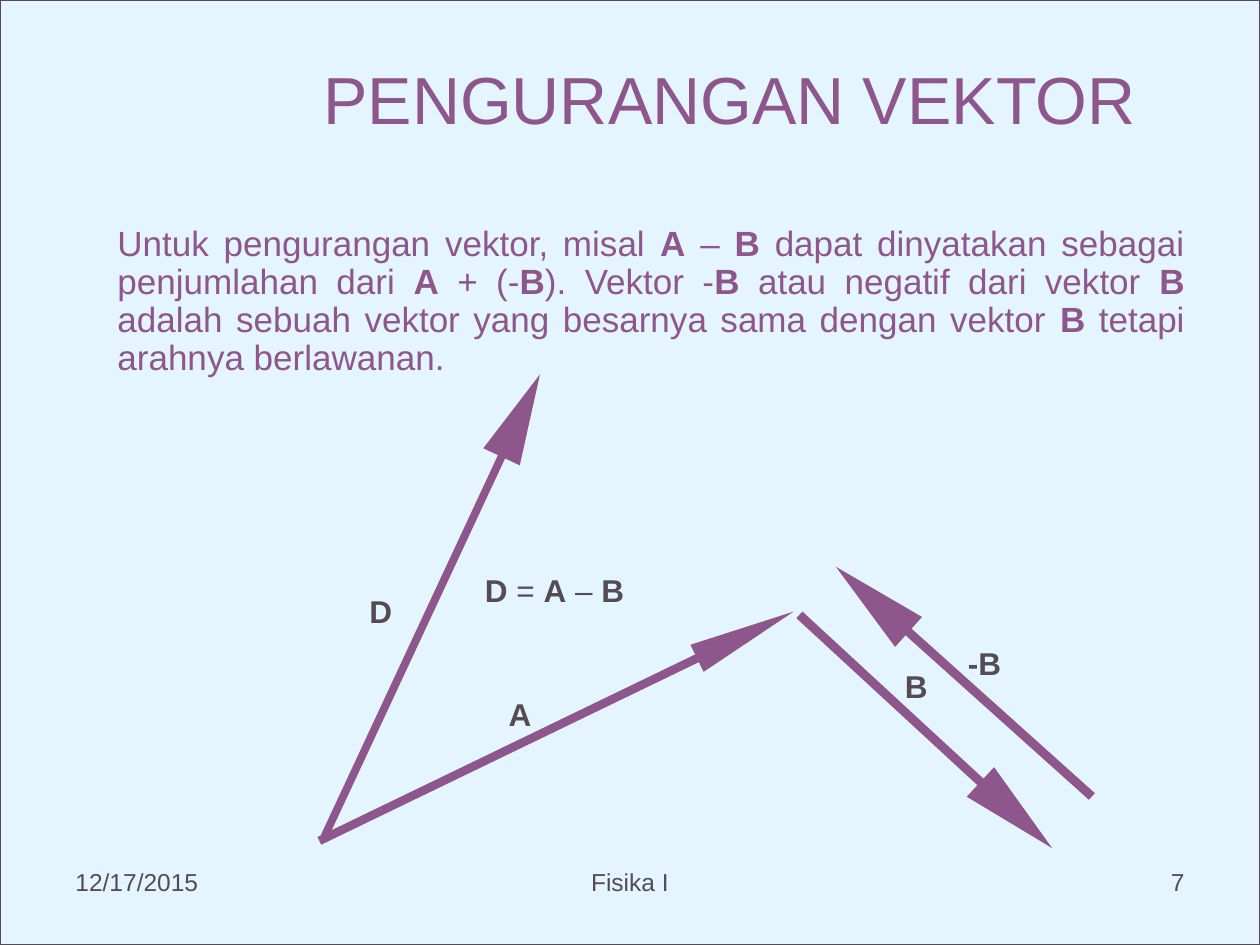
from pptx import Presentation
from pptx.dml.color import RGBColor
from pptx.enum.shapes import MSO_SHAPE as SHAPE
from pptx.enum.text import MSO_ANCHOR as ANCHOR, MSO_AUTO_SIZE as AUTO, PP_ALIGN as ALIGN
from pptx.util import Pt

FONT = "Arial"
PURPLE, GREY, PALE = "8E578B", "534D53", "E5F5FF"


def color(value):
    return RGBColor.from_string(value)


def write(tf, text, size, rgb, align=ALIGN.LEFT, anchor=ANCHOR.TOP):
    """Write one paragraph; text between asterisks is bold."""
    tf.word_wrap = True
    tf.auto_size = AUTO.NONE
    tf.vertical_anchor = anchor
    p = tf.paragraphs[0]
    p.alignment = align
    for i, part in enumerate(text.split("*")):
        if part:
            r = p.add_run()
            r.text = part
            r.font.name, r.font.size = FONT, Pt(size)
            r.font.bold = i % 2 == 1
            r.font.color.rgb = color(rgb)
    return p


def add_text(slide, box, *args):
    sp = slide.shapes.add_textbox(*map(Pt, box))
    return write(sp.text_frame, *args)


def add_filled(slide, kind, box, rgb):
    sp = slide.shapes.add_shape(kind, *map(Pt, box))
    sp.shadow.inherit = False
    sp.fill.solid()
    sp.fill.fore_color.rgb = color(rgb)
    sp.line.fill.background()
    return sp


def add_background(slide, box):
    sp = add_filled(slide, SHAPE.RECTANGLE, box, PALE)
    sp.line.color.rgb = color(GREY)
    sp.line.width = Pt(0.75)


def add_footer(slide, box):
    left, top, width, height = box
    parts = [("12/17/2015", 0, 168, ALIGN.LEFT),
             ("Fisika I", (width - 228) / 2, 228, ALIGN.CENTER),
             ("7", width - 168, 168, ALIGN.RIGHT)]
    for text, x, w, align in parts:
        add_text(slide, (left + x, top, w, height), text, 14, GREY, align)


def add_title(slide, box, text):
    sp = slide.shapes.title
    sp.left, sp.top, sp.width, sp.height = map(Pt, box)
    write(sp.text_frame, text, 38, PURPLE, ALIGN.CENTER, ANCHOR.MIDDLE)


def add_body(slide, box):
    text = ("Untuk pengurangan vektor, misal *A* – *B* dapat dinyatakan sebagai "
            "penjumlahan dari *A* + (-*B*). Vektor -*B* atau negatif dari vektor *B* "
            "adalah sebuah vektor yang besarnya sama dengan vektor *B* tetapi "
            "arahnya berlawanan.")
    add_text(slide, box, text, 20, PURPLE, ALIGN.JUSTIFY).line_spacing = 0.9


def add_diagram(slide, box):
    left, top = box[:2]
    # Arrows: centre x, centre y, length, head width, angle, shaft and head ratios
    arrows = [(217, 203.5, 301, 17.2, 334.2, 0.285, 3.563),   # A
              (428, 206.5, 196.5, 23, 42.7, 0.222, 2.423),    # B
              (449.8, 178, 196.5, 23, 221.9, 0.222, 2.423),   # -B
              (146, 134.5, 291.5, 23, 295, 0.196, 2.261)]     # D
    for x, y, length, head, angle, shaft, ratio in arrows:
        arrow = (left + x - length / 2, top + y - head / 2, length, head)
        sp = add_filled(slide, SHAPE.RIGHT_ARROW, arrow, PURPLE)
        sp.rotation = angle
        sp.adjustments[0], sp.adjustments[1] = shaft, ratio

    # Labels: text, x, y, width
    labels = [("*A*", 182.5, 182, 40), ("*B*", 409, 166, 40), ("*-B*", 445, 153, 54),
              ("*D*", 103, 123, 40), ("*D* = *A* – *B*", 169, 111, 145)]
    for text, x, y, width in labels:
        add_text(slide, (left + x, top + y, width, 27), text, 18, GREY)


def main():
    prs = Presentation()
    prs.slide_width, prs.slide_height = Pt(720), Pt(540)
    slide = prs.slides.add_slide(prs.slide_layouts[5])
    # Keep the title in front of the background
    title = slide.shapes.title
    add_background(slide, (0, 0, 720, 540))
    title.element.getparent().append(title.element)
    add_footer(slide, (36, 492, 648, 37))
    add_title(slide, (138, 26, 558, 60), "PENGURANGAN VEKTOR")
    add_body(slide, (60, 126, 624, 102))
    add_diagram(slide, (101, 211.5, 523, 271))
    prs.save("out.pptx")


if __name__ == "__main__":
    main()
